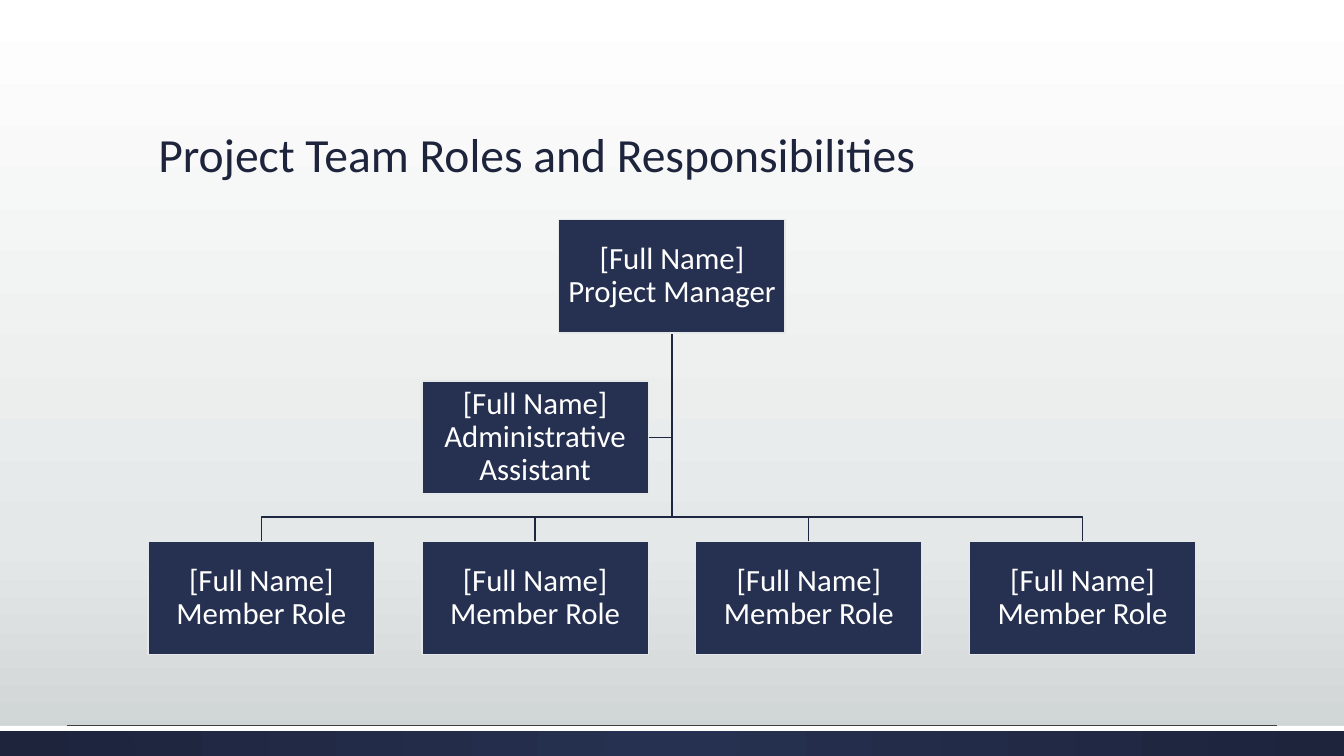
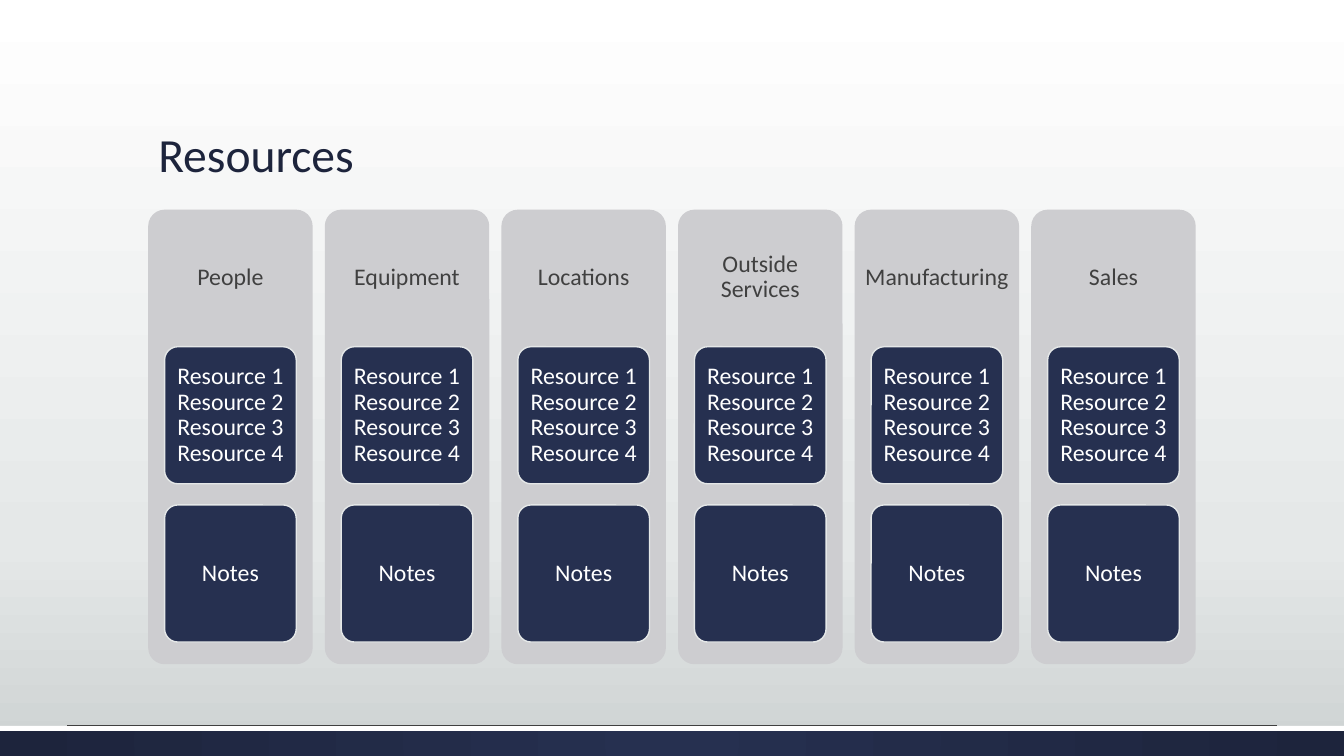
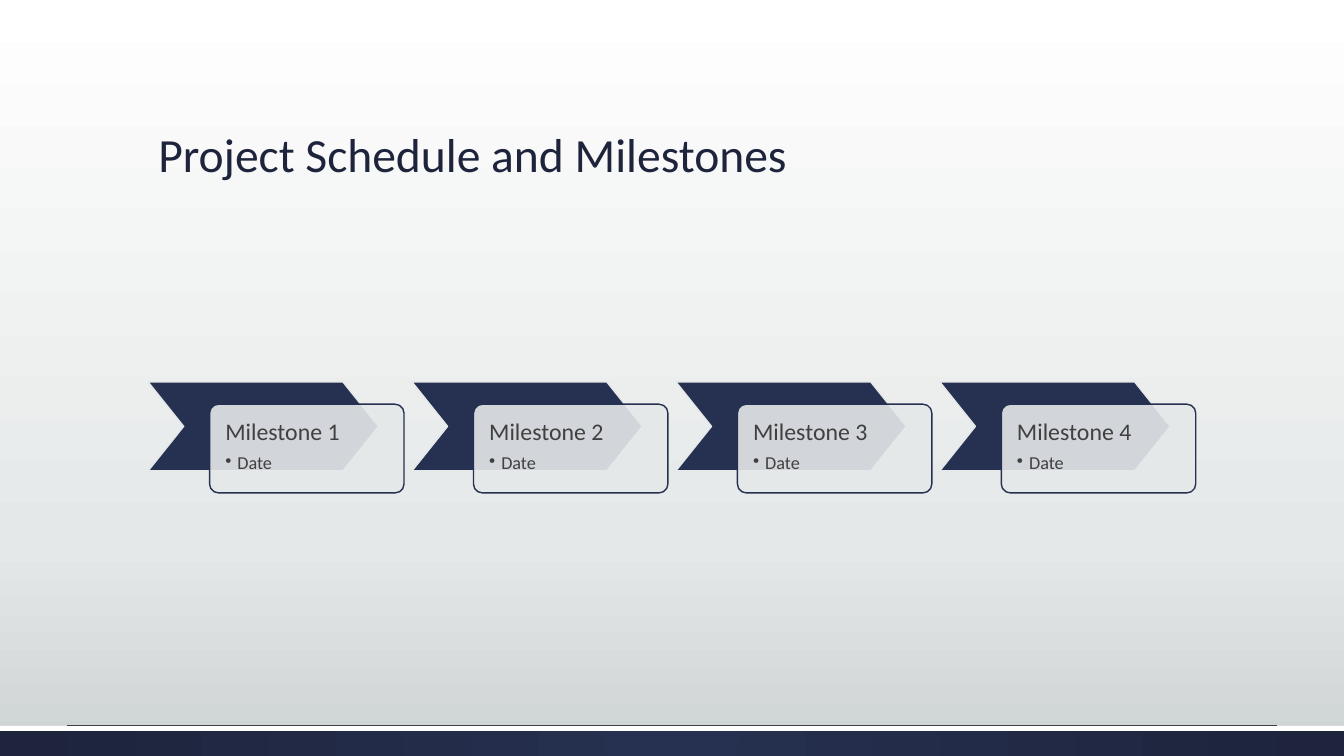
from pptx import Presentation
from pptx.dml.color import RGBColor
from pptx.enum.shapes import MSO_CONNECTOR, MSO_SHAPE
from pptx.enum.text import MSO_ANCHOR, MSO_AUTO_SIZE, PP_ALIGN
from pptx.oxml import parse_xml
from pptx.oxml.ns import nsdecls, qn
from pptx.util import Inches, Pt

COLORS = {
    "navy": "263050", "deep": "1D243C", "wire": "1E2640", "panel": "CDCDD0",
    "mist": "E5E8E8", "stone": "CDD2D2", "text": "404040", "white": "FFFFFF",
}
FONT = "Calibri"
WIDTH, HEIGHT = 13.33, 7.5
MARGIN, CONTENT_WIDTH = 1.47, 10.39
TITLE_BOX = (MARGIN, 0.51, CONTENT_WIDTH, 1.35)
BAND_TOP = 0.96 * HEIGHT
RULE_INSET = 0.05 * WIDTH

TEAM = {
    "title": "Project Team Roles and Responsibilities",
    "manager": "[Full Name] Project Manager",
    "assistant": "[Full Name] Administrative Assistant",
    "members": ["[Full Name] Member Role"] * 4,
}
RESOURCES = {
    "title": "Resources",
    "groups": ["People", "Equipment", "Locations", "Outside Services",
               "Manufacturing", "Sales"],
    "cards": ["Resource 1\nResource 2\nResource 3\nResource 4", "Notes"],
}
SCHEDULE = {
    "title": "Project Schedule and Milestones",
    "milestones": [(f"Milestone {number}", "Date") for number in range(1, 5)],
}


def rgb(name):
    return RGBColor.from_string(COLORS[name])


def columns(count, gap):
    """Return the left edges and the common width of equal columns."""
    width = (CONTENT_WIDTH - gap * (count - 1)) / count
    return [MARGIN + i * (width + gap) for i in range(count)], width


def write(frame, text, size=17, color="white", align=PP_ALIGN.CENTER,
          anchor=MSO_ANCHOR.MIDDLE, insets=None, bullet=None):
    """Fill a text frame; insets are left, top, right, bottom in inches."""
    frame.word_wrap = True
    frame.vertical_anchor = anchor
    if insets:
        (frame.margin_left, frame.margin_top,
         frame.margin_right, frame.margin_bottom) = map(Inches, insets)
    lines = [(text, size)]
    if bullet:
        lines.append((bullet, 13))
    for index, (line, points) in enumerate(lines):
        paragraph = frame.add_paragraph() if index else frame.paragraphs[0]
        paragraph.text = line
        paragraph.alignment = align
        paragraph.line_spacing = 0.9
        paragraph.space_after = Pt(6 if bullet and not index else 0)
        for run in paragraph.runs:
            run.font.name, run.font.size = FONT, Pt(points)
            run.font.color.rgb = rgb(color)
        if index:
            properties = paragraph._p.get_or_add_pPr()
            properties.set("marL", str(Inches(0.12)))
            properties.set("indent", str(-Inches(0.12)))
            properties.append(parse_xml(f'<a:buChar {nsdecls("a")} char="•"/>'))


def add_box(slide, kind, box, fill="navy", line="mist", adjust=None, alpha=None):
    shape = slide.shapes.add_shape(kind, *map(Inches, box))
    shape.shadow.inherit = False
    shape.fill.solid()
    shape.fill.fore_color.rgb = rgb(fill)
    if alpha:
        shape.fill._xPr.find(".//" + qn("a:srgbClr")).append(
            parse_xml(f'<a:alpha {nsdecls("a")} val="{alpha * 1000}"/>'))
    if line:
        shape.line.color.rgb = rgb(line)
        shape.line.width = Pt(1)
    else:
        shape.line.fill.background()
    if adjust is not None:
        shape.adjustments[0] = adjust
    return shape


def add_rule(slide, start, end):
    rule = slide.shapes.add_connector(
        MSO_CONNECTOR.STRAIGHT, *map(Inches, (*start, *end)))
    rule.line.color.rgb = rgb("text")
    rule.line.width = Pt(0.25)
    rule._element.spPr.append(parse_xml(f'<a:effectLst {nsdecls("a")}/>'))
    return rule


def add_branch(slide, points):
    """Draw an open line with right-angled bends through the points."""
    start, *rest = [tuple(map(Inches, point)) for point in points]
    outline = slide.shapes.build_freeform(*start)
    outline.add_line_segments(rest, close=False)
    branch = outline.convert_to_shape()
    branch.shadow.inherit = False
    branch.fill.background()
    branch.line.color.rgb = rgb("wire")
    branch.line.width = Pt(1)


def set_gradient(owner, fill, stops, direction):
    """Give a fill any number of stops and a direction written in XML."""
    fill.gradient()
    marks = "".join(
        f'<a:gs pos="{share * 1000}"><a:srgbClr val="{COLORS[name]}"/></a:gs>'
        for share, name in stops)
    default = owner.element.find(".//" + qn("a:gradFill"))
    default.getparent().replace(default, parse_xml(
        f'<a:gradFill {nsdecls("a")} rotWithShape="1">'
        f"<a:gsLst>{marks}</a:gsLst>{direction}</a:gradFill>"))


def style_master(deck, slide):
    """Set background, title place and bottom band; slide is used to draw them."""
    master = deck.slide_master
    set_gradient(master, master.background.fill,
                 [(0, "white"), (72, "mist"), (100, "stone")],
                 '<a:lin ang="5400000" scaled="0"/>')
    title = master.placeholders[0]
    title.left, title.top, title.width, title.height = map(Inches, TITLE_BOX)
    title.text_frame.auto_size = MSO_AUTO_SIZE.NONE

    band = add_box(slide, MSO_SHAPE.RECTANGLE,
                   (0, BAND_TOP, WIDTH, HEIGHT - BAND_TOP), line=None)
    set_gradient(band, band.fill, [(0, "navy"), (100, "deep")],
                 '<a:path path="circle"><a:fillToRect l="50000" t="50000" '
                 'r="50000" b="50000"/></a:path>')
    strip = add_box(slide, MSO_SHAPE.RECTANGLE, (0, BAND_TOP, WIDTH, 0.05),
                    fill="white", line=None)
    rule = add_rule(slide, (RULE_INSET, BAND_TOP - 0.01),
                    (WIDTH - RULE_INSET, BAND_TOP - 0.01))
    for part in (band, strip, rule):
        master.shapes.element.append(part.element)


def add_titled_slide(deck, title):
    slide = deck.slides.add_slide(deck.slide_layouts.get_by_name("Title Only"))
    write(slide.shapes.title.text_frame, title, size=34, color="deep",
          align=PP_ALIGN.LEFT, anchor=MSO_ANCHOR.BOTTOM)
    return slide


def build_team(slide):
    lefts, width = columns(4, 0.47)
    height, bus = width / 2, 5.13
    center = MARGIN + CONTENT_WIDTH / 2
    manager_top, assistant_top, member_top = 2.18, 3.78, 5.37
    trunk_top = manager_top + height
    assistant_middle = assistant_top + height / 2

    add_branch(slide, [(center, trunk_top), (center, assistant_middle),
                       (lefts[1] + width, assistant_middle)])
    for left in reversed(lefts):
        x = left + width / 2
        add_branch(slide, [(center, trunk_top), (center, bus),
                           (x, bus), (x, member_top)])

    roles = [(TEAM["manager"], center - width / 2, manager_top)]
    roles += [(text, left, member_top)
              for text, left in zip(TEAM["members"], lefts)]
    roles.append((TEAM["assistant"], lefts[1], assistant_top))
    for text, left, top in roles:
        role = add_box(slide, MSO_SHAPE.RECTANGLE, (left, top, width, height))
        write(role.text_frame, text, size=22, insets=[0.02] * 4)


def build_resources(slide):
    lefts, width = columns(len(RESOURCES["groups"]), 0.12)
    top, height = 2.08, 4.51
    card_top, card_height, card_pitch = 3.44, 1.36, 1.57
    card_width = 0.8 * width
    for left, group in zip(lefts, RESOURCES["groups"]):
        panel = add_box(slide, MSO_SHAPE.ROUNDED_RECTANGLE,
                        (left, top, width, height), fill="panel", line=None,
                        adjust=0.1)
        write(panel.text_frame, group, color="text",
              insets=(0.02, 0.02, 0.02, 0.7 * height + 0.03))
        for row, text in enumerate(RESOURCES["cards"]):
            card = add_box(slide, MSO_SHAPE.ROUNDED_RECTANGLE,
                           (left + 0.1 * width, card_top + row * card_pitch,
                            card_width, card_height), adjust=0.1)
            write(card.text_frame, text, insets=(0.05, 0.04, 0.05, 0.04))


def build_schedule(slide):
    lefts, width = columns(len(SCHEDULE["milestones"]), 0.08)
    top, height, drop = 3.79, 0.88, 0.22
    arrow_width, card_width = 0.9 * width, 0.76 * width
    for left, (milestone, date) in zip(lefts, SCHEDULE["milestones"]):
        add_box(slide, MSO_SHAPE.CHEVRON, (left, top, arrow_width, height),
                adjust=0.4)
        card = add_box(slide, MSO_SHAPE.ROUNDED_RECTANGLE,
                       (left + width - card_width, top + drop, card_width, height),
                       fill="mist", line="navy", adjust=0.1, alpha=90)
        write(card.text_frame, milestone, color="text", align=PP_ALIGN.LEFT,
              anchor=MSO_ANCHOR.TOP, insets=[0.13] * 4, bullet=date)


def main():
    deck = Presentation()
    deck.slide_width, deck.slide_height = Inches(WIDTH), Inches(HEIGHT)
    pages = [(TEAM, build_team), (RESOURCES, build_resources),
             (SCHEDULE, build_schedule)]
    for number, (content, build) in enumerate(pages):
        slide = add_titled_slide(deck, content["title"])
        if number == 0:
            style_master(deck, slide)
        build(slide)
    deck.save("out.pptx")


if __name__ == "__main__":
    main()
